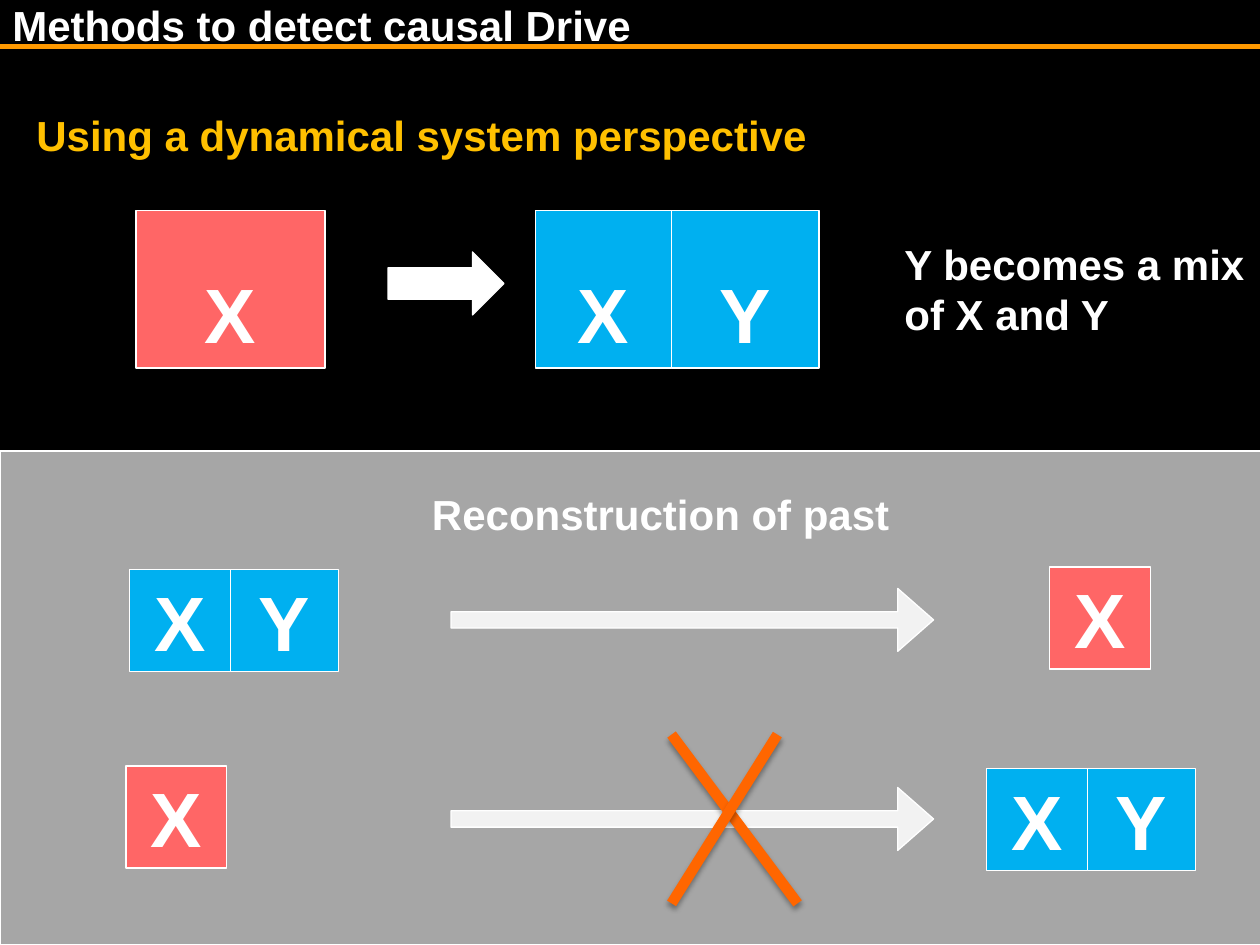
from dataclasses import dataclass

from lxml import etree
from pptx import Presentation
from pptx.dml.color import RGBColor
from pptx.enum import shapes, text
from pptx.oxml import ns
from pptx.util import Inches, Pt


@dataclass(frozen=True)
class Theme:
    font: str = "Arial"
    heading_size: int = 24
    letter_size: int = 44
    outline_width: float = 0.75
    rule_width: float = 3
    cross_width: float = 6
    background: str = "000000"
    white: str = "FFFFFF"
    gold: str = "FFC000"
    rule: str = "FF9900"
    panel: str = "A6A6A6"
    arrow: str = "F2F2F2"
    cause: str = "FF6666"
    effect: str = "00B0F0"
    cross: str = "FF6600"


THEME = Theme()


@dataclass(frozen=True)
class Box:
    left: float
    top: float
    width: float
    height: float

    def lengths(self):
        return [Inches(n) for n in (self.left, self.top, self.width, self.height)]


@dataclass(frozen=True)
class Label:
    words: str
    box: Box
    color: str = THEME.white
    wrap: bool = True


@dataclass(frozen=True)
class State:
    """A row of touching lettered boxes, one width per letter."""
    letters: str
    left: float
    top: float
    widths: tuple[float, ...]
    height: float
    color: str
    line_spacing: float = 1.0


@dataclass(frozen=True)
class Arrow:
    box: Box
    color: str
    adjustments: tuple[float, float] = (0.5, 0.5)


@dataclass(frozen=True)
class Line:
    start: tuple[float, float]
    end: tuple[float, float]
    color: str
    width: float
    shadow: bool = False


LABELS = [
    Label("Methods to detect causal Drive", Box(0, -0.05, 5.16, 0.5), wrap=False),
    Label("Using a dynamical system perspective", Box(0.19, 0.82, 6.38, 0.5),
          THEME.gold, wrap=False),
    Label("Y becomes a mix of X and Y", Box(7.08, 1.84, 3, 0.91)),
    Label("Reconstruction of past", Box(3.33, 3.83, 4.42, 0.5)),
]

SINGLE, PAIR, SMALL = (0.8,), (0.8, 0.86), 0.81
STATES = [
    State("X", 1.08, 1.67, (1.5,), 1.25, THEME.cause, 1.5),
    State("XY", 4.25, 1.67, (1.08, 1.17), 1.25, THEME.effect, 1.5),
    State("XY", 1.03, 4.52, PAIR, SMALL, THEME.effect),
    State("X", 8.33, 4.5, SINGLE, SMALL, THEME.cause),
    State("X", 1, 6.08, SINGLE, SMALL, THEME.cause),
    State("XY", 7.83, 6.1, PAIR, SMALL, THEME.effect),
]

ARROWS = [Arrow(Box(3.08, 2, 0.92, 0.5), THEME.white)] + [
    Arrow(Box(3.58, top, 3.83, 0.5), THEME.arrow, (0.26, 0.57)) for top in (4.67, 6.25)
]

HEADER_RULE = Line((0, 0.37), (10, 0.37), THEME.rule, THEME.rule_width)
CROSS = [
    Line((5.33, 5.83), (6.33, 7.17), THEME.cross, THEME.cross_width, shadow=True),
    Line((5.33, 7.17), (6.17, 5.83), THEME.cross, THEME.cross_width, shadow=True),
]


def rgb(color: str) -> RGBColor:
    return RGBColor.from_string(color)


def format_font(paragraph, size: float, color: str) -> None:
    for run in paragraph.runs:
        font = run.font
        font.name, font.size, font.bold = THEME.font, Pt(size), True
        font.color.rgb = rgb(color)


def add_outlined(slide, kind, box: Box, color: str):
    shape = slide.shapes.add_shape(kind, *box.lengths())
    shape.shadow.inherit = False
    shape.fill.solid()
    shape.fill.fore_color.rgb = rgb(color)
    shape.line.color.rgb = rgb(THEME.white)
    shape.line.width = Pt(THEME.outline_width)
    return shape


def add_label(slide, label: Label) -> None:
    frame = slide.shapes.add_textbox(*label.box.lengths()).text_frame
    frame.word_wrap = label.wrap
    frame.auto_size = text.MSO_AUTO_SIZE.SHAPE_TO_FIT_TEXT
    frame.text = label.words
    format_font(frame.paragraphs[0], THEME.heading_size, label.color)


def add_state(slide, state: State) -> None:
    left = state.left
    for letter, width in zip(state.letters, state.widths):
        box = Box(left, state.top, width, state.height)
        shape = add_outlined(slide, shapes.MSO_SHAPE.RECTANGLE, box, state.color)
        frame = shape.text_frame
        frame.text = letter
        frame.vertical_anchor = text.MSO_ANCHOR.MIDDLE
        paragraph = frame.paragraphs[0]
        paragraph.alignment = text.PP_ALIGN.CENTER
        paragraph.line_spacing = state.line_spacing
        format_font(paragraph, THEME.letter_size, THEME.white)
        left += width


def add_arrow(slide, arrow: Arrow) -> None:
    shape = add_outlined(slide, shapes.MSO_SHAPE.RIGHT_ARROW, arrow.box, arrow.color)
    for index, value in enumerate(arrow.adjustments):
        shape.adjustments[index] = value


def add_line(slide, line: Line) -> None:
    ends = [Inches(n) for n in line.start + line.end]
    connector = slide.shapes.add_connector(shapes.MSO_CONNECTOR.STRAIGHT, *ends)
    connector.line.color.rgb = rgb(line.color)
    connector.line.width = Pt(line.width)
    effects = etree.SubElement(connector._element.spPr, ns.qn("a:effectLst"))
    if line.shadow:
        shadow = etree.SubElement(effects, ns.qn("a:outerShdw"), blurRad=str(Pt(3.1)),
                                  dist=str(Pt(1.8)), dir="5400000", rotWithShape="0")
        color = etree.SubElement(shadow, ns.qn("a:srgbClr"), val=THEME.background)
        etree.SubElement(color, ns.qn("a:alpha"), val="35000")


def main() -> None:
    presentation = Presentation()
    presentation.slide_width, presentation.slide_height = Inches(10), Inches(7.5)
    slide = presentation.slides.add_slide(presentation.slide_layouts[6])
    slide.background.fill.solid()
    slide.background.fill.fore_color.rgb = rgb(THEME.background)

    add_line(slide, HEADER_RULE)
    add_outlined(slide, shapes.MSO_SHAPE.RECTANGLE, Box(0, 3.58, 10.08, 3.92), THEME.panel)
    for label in LABELS:
        add_label(slide, label)
    for state in STATES:
        add_state(slide, state)
    for arrow in ARROWS:
        add_arrow(slide, arrow)
    for line in CROSS:
        add_line(slide, line)
    presentation.save("out.pptx")


if __name__ == "__main__":
    main()
